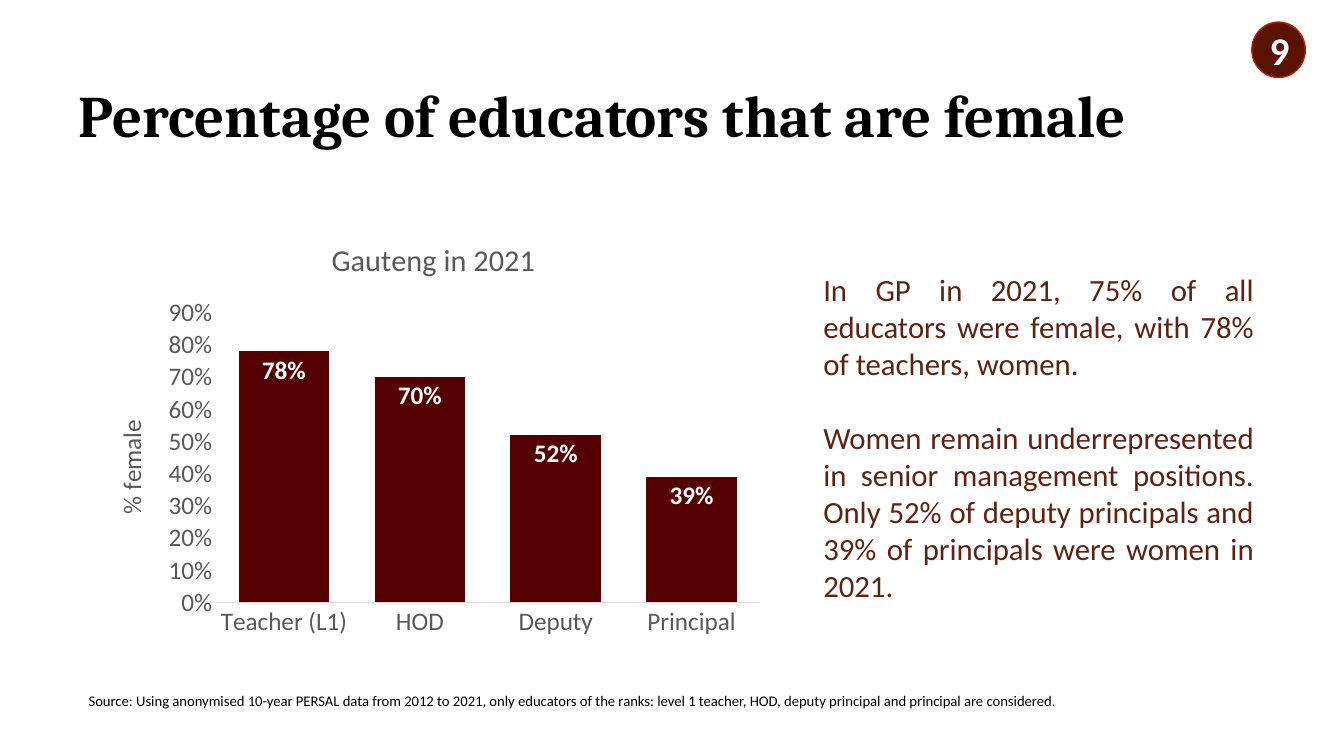
from dataclasses import dataclass

import pptx
import pptx.chart.data
import pptx.dml.color
import pptx.enum.chart
import pptx.enum.shapes
import pptx.enum.text
import pptx.oxml
import pptx.oxml.ns
import pptx.util

Pt = pptx.util.Pt
ALIGN = pptx.enum.text.PP_ALIGN
MIDDLE = pptx.enum.text.MSO_ANCHOR.MIDDLE


@dataclass(frozen=True)
class Theme:
    heading_font: str = "Cambria"
    body_font: str = "Calibri"
    black: str = "000000"
    white: str = "FFFFFF"
    grey: str = "595959"
    axis_line: str = "D9D9D9"
    bar: str = "550000"
    badge: str = "591300"
    badge_line: str = "B22600"
    body: str = "5B2413"
    title_size: float = 42
    badge_size: float = 28
    body_size: float = 22
    chart_title_size: float = 21.6
    chart_size: float = 18
    source_size: float = 10.5


THEME = Theme()

FEMALE_SHARE = {"Teacher (L1)": 0.78, "HOD": 0.70, "Deputy": 0.52, "Principal": 0.39}
FINDINGS = [
    "In GP in 2021, 75% of all educators were female, with 78% of teachers, women.",
    "Women remain underrepresented in senior management positions. Only 52% of "
    "deputy principals and 39% of principals were women in 2021.",
]
SOURCE = (
    "Source: Using anonymised 10-year PERSAL data from 2012 to 2021, only educators of "
    "the ranks: level 1 teacher, HOD, deputy principal and principal are considered."
)


def rgb(value):
    return pptx.dml.color.RGBColor.from_string(value)


def style_font(font, size, color, bold=False, name=THEME.body_font):
    font.name = name
    font.size = Pt(size)
    font.bold = bold
    font.color.rgb = rgb(color)


def add_title(s, text, box):
    sp = s.shapes.title
    sp.left, sp.top, sp.width, sp.height = map(Pt, box)
    sp.fill.solid()
    sp.fill.fore_color.rgb = rgb(THEME.white)
    tf = sp.text_frame
    tf.text = text
    tf.vertical_anchor = MIDDLE
    p = tf.paragraphs[0]
    p.alignment = ALIGN.LEFT
    p.line_spacing = 0.9
    style_font(p.font, THEME.title_size, THEME.black, True, THEME.heading_font)


def add_badge(s, text, box):
    sp = s.shapes.add_shape(pptx.enum.shapes.MSO_SHAPE.OVAL, *map(Pt, box))
    sp.shadow.inherit = False
    sp.fill.solid()
    sp.fill.fore_color.rgb = rgb(THEME.badge)
    sp.line.color.rgb = rgb(THEME.badge_line)
    sp.line.width = Pt(1)
    tf = sp.text_frame
    tf.text = text
    tf.vertical_anchor = MIDDLE
    p = tf.paragraphs[0]
    p.alignment = ALIGN.CENTER
    style_font(p.font, THEME.badge_size, THEME.white, True)


def add_text(s, paragraphs, box, size, color, align=ALIGN.LEFT, inset=3.6, gap=0):
    """Add a wrapped text box with a gap in points between its paragraphs."""
    tf = s.shapes.add_textbox(*map(Pt, box)).text_frame
    tf.word_wrap = True
    tf.margin_top = tf.margin_bottom = Pt(inset)
    tf.text = "\n".join(paragraphs)
    for p in tf.paragraphs:
        p.alignment = align
        style_font(p.font, size, color)
    for p in tf.paragraphs[1:]:
        p.space_before = Pt(gap)


def set_heading(owner, text, size):
    """Title a chart or an axis."""
    title = owner.chart_title if hasattr(owner, "chart_title") else owner.axis_title
    tf = title.text_frame
    tf.text = text
    style_font(tf.paragraphs[0].font, size, THEME.grey)


def set_plot_area(chart, x, y, w, h):
    """Place the inner plot area as fractions of the chart."""
    layout = pptx.oxml.parse_xml(
        f'<c:layout {pptx.oxml.ns.nsdecls("c")}><c:manualLayout>'
        '<c:layoutTarget val="inner"/><c:xMode val="edge"/><c:yMode val="edge"/>'
        f'<c:x val="{x}"/><c:y val="{y}"/><c:w val="{w}"/><c:h val="{h}"/>'
        "</c:manualLayout></c:layout>"
    )
    area = chart._chartSpace.chart.plotArea
    for old in area.findall(pptx.oxml.ns.qn("c:layout")):
        area.remove(old)
    area.insert(0, layout)


def style_axes(chart):
    for axis in (chart.category_axis, chart.value_axis):
        axis.has_major_gridlines = False
        axis.major_tick_mark = pptx.enum.chart.XL_TICK_MARK.NONE
        style_font(axis.tick_labels.font, THEME.chart_size, THEME.grey)
    line = chart.category_axis.format.line
    line.color.rgb = rgb(THEME.axis_line)
    line.width = Pt(0.75)

    values = chart.value_axis
    values.format.line.fill.background()
    values.minimum_scale, values.maximum_scale, values.major_unit = 0, 0.9, 0.1
    values.tick_labels.number_format = "0%"
    values.tick_labels.number_format_is_linked = False
    set_heading(values, "% female", THEME.chart_size)


def add_bar_chart(s, title, shares, box):
    data = pptx.chart.data.CategoryChartData(number_format="0%")
    data.categories = shares.keys()
    data.add_series("Series 1", shares.values())
    kind = pptx.enum.chart.XL_CHART_TYPE.COLUMN_CLUSTERED
    chart = s.shapes.add_chart(kind, *map(Pt, box), data).chart
    style_font(chart.font, THEME.chart_size, THEME.black)
    chart.has_legend = False
    set_heading(chart, title, THEME.chart_title_size)
    style_axes(chart)
    set_plot_area(chart, 0.18, 0.22, 0.8, 0.68)

    plot = chart.plots[0]
    plot.gap_width = 50
    plot.overlap = -27
    plot.vary_by_categories = False
    series = plot.series[0]
    series.format.fill.solid()
    series.format.fill.fore_color.rgb = rgb(THEME.bar)
    labels = series.data_labels
    labels.show_value = True
    labels.position = pptx.enum.chart.XL_LABEL_POSITION.INSIDE_END
    labels.number_format = "0%"
    labels.number_format_is_linked = False
    style_font(labels.font, THEME.chart_size, THEME.white, True)


def main():
    prs = pptx.Presentation()
    prs.slide_width, prs.slide_height = Pt(960), Pt(540)
    s = prs.slides.add_slide(prs.slide_layouts.get_by_name("Title Only"))

    add_title(s, "Percentage of educators that are female", (49, 32.4, 828, 104.4))
    add_badge(s, "9", (894.2, 15.8, 38.2, 39.6))
    add_text(s, FINDINGS, (581, 186.5, 321.8, 254.2), THEME.body_size, THEME.body,
             ALIGN.JUSTIFY, inset=7.2, gap=26.5)
    add_text(s, [SOURCE], (56.2, 490.3, 846.7, 20.2), THEME.source_size, THEME.black)
    add_bar_chart(s, "Gauteng in 2021", FEMALE_SHARE, (67, 156.2, 485.3, 304.6))

    prs.save("out.pptx")


if __name__ == "__main__":
    main()
